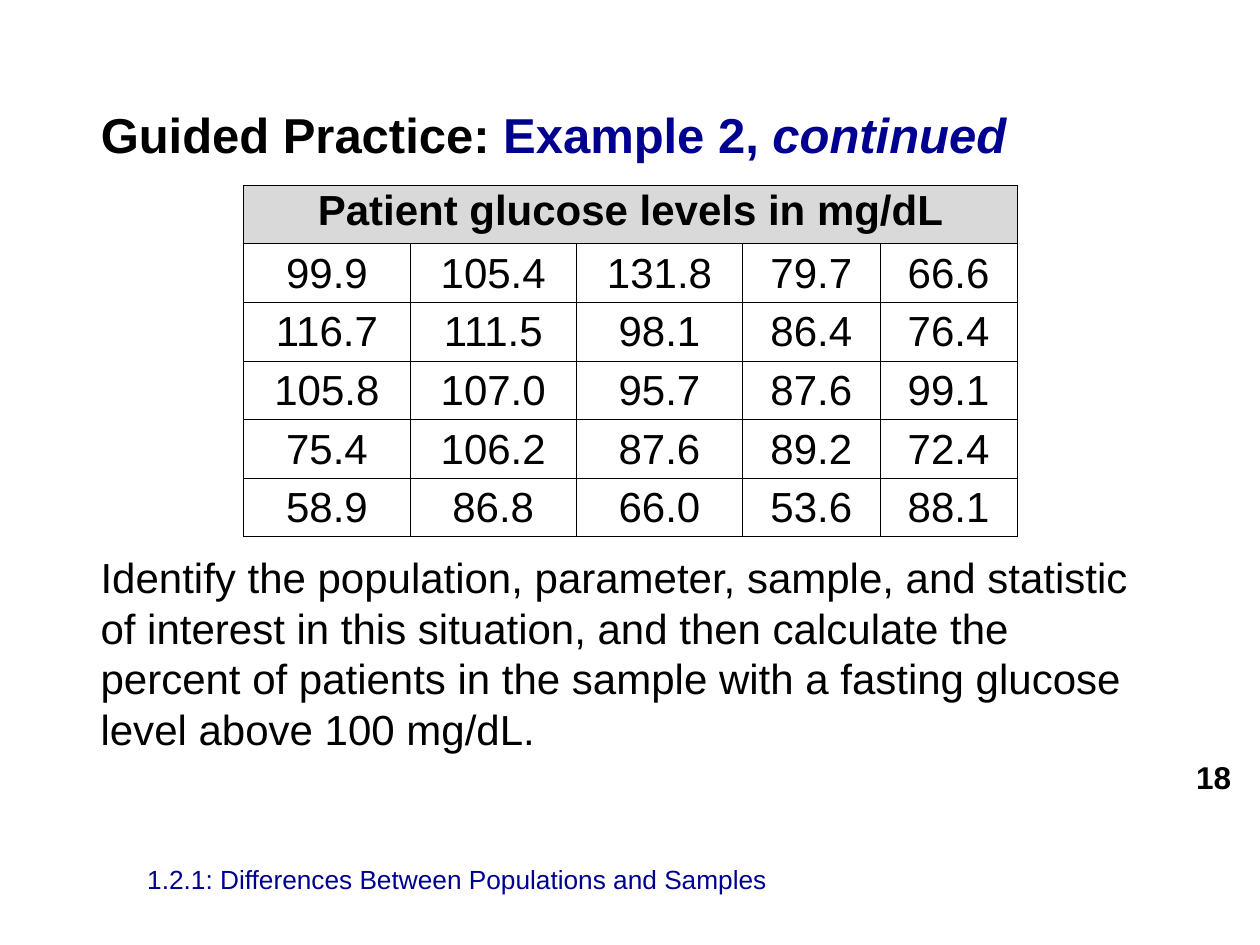
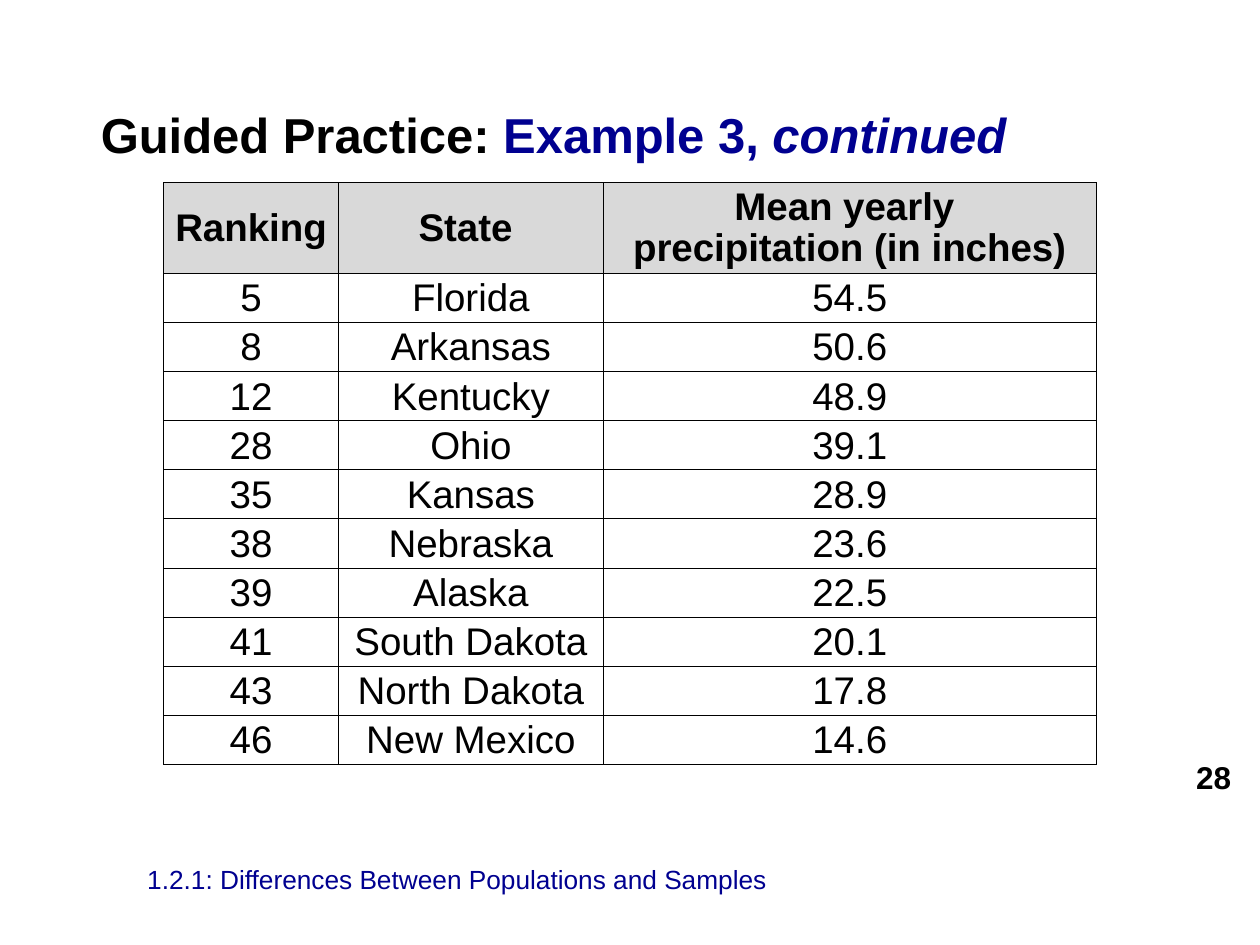
import pptx
import pptx.util
import pptx.dml.color
import pptx.enum.text
import pptx.oxml
from collections import namedtuple

SLIDE_WIDTH = pptx.util.Inches(10)
SLIDE_HEIGHT = pptx.util.Inches(7.5)
FONT = "Arial"
BLACK, NAVY, GREY, WHITE = "000000", "000090", "D9D9D9", "FFFFFF"
ALIGN = pptx.enum.text.PP_ALIGN
ANCHOR = pptx.enum.text.MSO_ANCHOR
DRAWING_NS = "http://schemas.openxmlformats.org/drawingml/2006/main"

# Boxes are given in percent of the slide's width and height
Box = namedtuple("Box", "left top width height")
TITLE_BOX = Box(7, 10.4, 85.9, 7.4)
QUESTION_BOX = Box(7, 58.4, 85.9, 22)
NUMBER_BOX = Box(90.7, 80.2, 8, 4.1)
FOOTER_BOX = Box(10.7, 91.1, 62.8, 3.9)

FOOTER = "1.2.1: Differences Between Populations and Samples"
QUESTION = ("Identify the population, parameter, sample, and statistic of interest "
            "in this situation, and then calculate the percent of patients in the "
            "sample with a fasting glucose level above 100 mg/dL.")
GLUCOSE_TITLE = "Patient glucose levels in mg/dL"
GLUCOSE_LEVELS = [
    ["99.9", "105.4", "131.8", "79.7", "66.6"],
    ["116.7", "111.5", "98.1", "86.4", "76.4"],
    ["105.8", "107.0", "95.7", "87.6", "99.1"],
    ["75.4", "106.2", "87.6", "89.2", "72.4"],
    ["58.9", "86.8", "66.0", "53.6", "88.1"],
]
RAIN_HEADER = ["Ranking", "State ", "Mean yearly \nprecipitation (in inches)"]
RAIN_BY_STATE = [
    ["5", "Florida", "54.5"],
    ["8", "Arkansas", "50.6"],
    ["12", "Kentucky", "48.9"],
    ["28", "Ohio", "39.1"],
    ["35", "Kansas", "28.9"],
    ["38", "Nebraska", "23.6"],
    ["39", "Alaska", "22.5"],
    ["41", "South Dakota", "20.1"],
    ["43", "North Dakota", "17.8"],
    ["46", "New Mexico", "14.6"],
]


def across(percent):
    return round(SLIDE_WIDTH * percent / 100)


def down(percent):
    return round(SLIDE_HEIGHT * percent / 100)


def place(box):
    return across(box.left), down(box.top), across(box.width), down(box.height)


def color(hex_text):
    return pptx.dml.color.RGBColor.from_string(hex_text)


def write(para, text, size, ink=BLACK, bold=False, italic=False,
          align=ALIGN.LEFT, spacing=None):
    """Add text to a paragraph; a newline becomes a line break."""
    para.alignment = align
    if spacing is not None:
        para.line_spacing = spacing
    for index, line in enumerate(text.split("\n")):
        if index:
            para.add_line_break()
        span = para.add_run()
        span.text = line
        span.font.name = FONT
        span.font.size = pptx.util.Pt(size)
        span.font.bold = bold
        span.font.italic = italic
        span.font.color.rgb = color(ink)


def add_text(page, box, text, size, anchor=ANCHOR.MIDDLE, **style):
    frame = page.shapes.add_textbox(*place(box)).text_frame
    frame.word_wrap = True
    frame.vertical_anchor = anchor
    frame.margin_top = frame.margin_bottom = 0
    write(frame.paragraphs[0], text, size, **style)


def add_page(deck, example, number):
    """Start a slide with the shared title, page number and footer."""
    page = deck.slides.add_slide(deck.slide_layouts[5])
    title = page.shapes.title
    title.left, title.top, title.width, title.height = place(TITLE_BOX)
    frame = title.text_frame
    frame.word_wrap = True
    frame.auto_size = pptx.enum.text.MSO_AUTO_SIZE.NONE
    frame.vertical_anchor = ANCHOR.TOP
    heading = frame.paragraphs[0]
    write(heading, "Guided Practice: ", 28, bold=True)
    write(heading, f"Example {example}, ", 28, ink=NAVY, bold=True)
    write(heading, "continued", 28, ink=NAVY, bold=True, italic=True)
    add_text(page, NUMBER_BOX, str(number), 18, bold=True, align=ALIGN.RIGHT)
    add_text(page, FOOTER_BOX, FOOTER, 15, ink=NAVY)
    return page


def outline(cell):
    """Draw thin black borders; they must precede the fill."""
    properties = cell._tc.get_or_add_tcPr()
    for index, side in enumerate(("lnL", "lnR", "lnT", "lnB")):
        properties.insert(index, pptx.oxml.parse_xml(
            f'<a:{side} xmlns:a="{DRAWING_NS}" w="{pptx.util.Pt(0.5)}">'
            f'<a:solidFill><a:srgbClr val="{BLACK}"/></a:solidFill></a:{side}>'))


def add_grid(page, left, top, widths, heights, rows, size):
    """Place a table whose first row is a bold grey header."""
    box = Box(left, top, sum(widths), sum(heights))
    table = page.shapes.add_table(len(rows), len(widths), *place(box)).table
    table.horz_banding = False
    for column, width in zip(table.columns, widths):
        column.width = across(width)
    for row, height in zip(table.rows, heights):
        row.height = down(height)
    for row_index, values in enumerate(rows):
        header = row_index == 0
        for column_index, value in enumerate(values):
            cell = table.cell(row_index, column_index)
            cell.fill.solid()
            cell.fill.fore_color.rgb = color(GREY if header else WHITE)
            outline(cell)
            cell.vertical_anchor = ANCHOR.MIDDLE
            cell.margin_left = cell.margin_right = pptx.util.Inches(0.01)
            cell.margin_top, cell.margin_bottom = pptx.util.Inches(0.01), 0
            if value:
                write(cell.text_frame.paragraphs[0], value, size, bold=header,
                      align=ALIGN.CENTER, spacing=0.97 if "\n" in value else None)
    return table


def glucose_slide(deck):
    page = add_page(deck, 2, 18)
    columns = 5
    header = [GLUCOSE_TITLE] + [""] * (columns - 1)
    table = add_grid(page, 19.35, 19.6, [13.2] * 3 + [10.9] * 2, [6.2] * 6,
                     [header] + GLUCOSE_LEVELS, 24)
    title_cell = table.cell(0, 0)
    title_cell.merge(table.cell(0, columns - 1))
    title_cell.margin_top, title_cell.margin_bottom = 0, pptx.util.Inches(0.05)
    add_text(page, QUESTION_BOX, QUESTION, 24, anchor=ANCHOR.TOP,
             spacing=pptx.util.Pt(28.8))


def precipitation_slide(deck):
    page = add_page(deck, 3, 28)
    add_grid(page, 13, 19.3, [13.85, 21.05, 39.1],
             [9.2] + [5.2] * len(RAIN_BY_STATE),
             [RAIN_HEADER] + RAIN_BY_STATE, 22)


def main():
    deck = pptx.Presentation()
    deck.slide_width, deck.slide_height = SLIDE_WIDTH, SLIDE_HEIGHT
    glucose_slide(deck)
    precipitation_slide(deck)
    deck.save("out.pptx")


if __name__ == "__main__":
    main()
